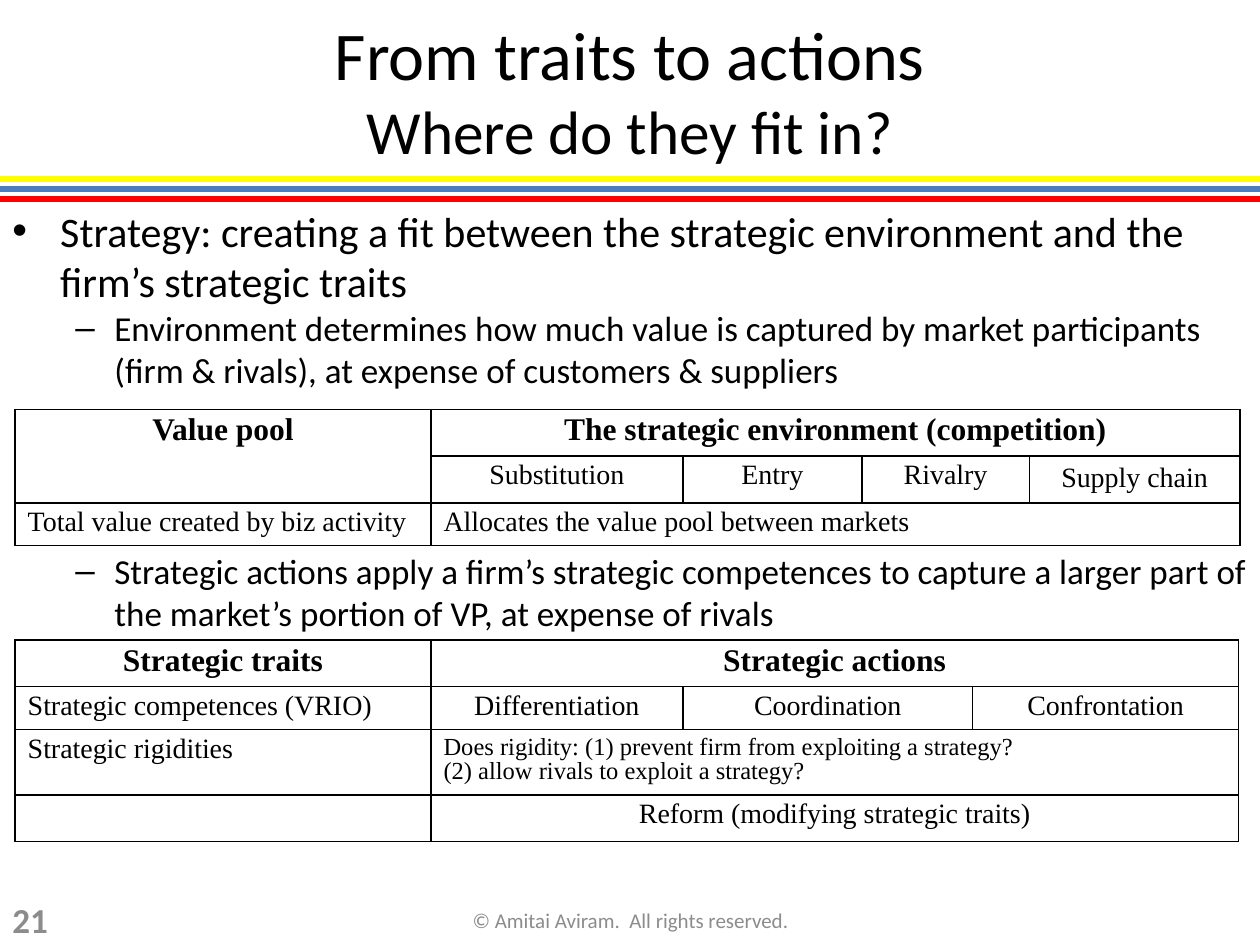
from lxml.etree import SubElement
from pptx import Presentation
from pptx.dml.color import RGBColor as Rgb
from pptx.enum.shapes import MSO_CONNECTOR as Conn
from pptx.enum.text import MSO_ANCHOR as Anchor, PP_ALIGN as Align
from pptx.oxml.ns import qn
from pptx.util import Inches, Pt

INK = {"black": "000000", "gray": "8C8C8C", "yellow": "FFFF00",
       "blue": "4B7EBC", "red": "FF0000"}
SANS, SERIF = "Calibri", "Times New Roman"
MID, LEFT = Align.CENTER, Align.LEFT


def tint(name):
    return Rgb.from_string(INK[name])


def add_run(para, text, size, face=SANS, ink="black", bold=False):
    run = para.add_run()
    run.text = text
    font = run.font
    font.size, font.name, font.bold = Pt(size), face, bold
    font.color.rgb = tint(ink)


def add_box(slide, x, y, w, h, anchor=Anchor.MIDDLE):
    box = slide.shapes.add_textbox(Inches(x), Inches(y), Inches(w), Inches(h))
    frame = box.text_frame
    frame.word_wrap = True
    frame.vertical_anchor = anchor
    return frame


def add_rule(slide, y, ink):
    rule = slide.shapes.add_connector(
        Conn.STRAIGHT, Inches(0), Inches(y), Inches(10), Inches(y))
    rule.line.color.rgb = tint(ink)
    rule.line.width = Pt(3)
    SubElement(rule._element.spPr, qn("a:effectLst"))


def set_bullet(para, mark, left, hang):
    props = para._p.get_or_add_pPr()
    props.set("marL", str(Inches(left)))
    props.set("indent", str(-Inches(hang)))
    SubElement(props, qn("a:buFont"), typeface="Arial")
    SubElement(props, qn("a:buChar"), char=mark)


def add_title(slide):
    para = add_box(slide, 0, 0, 10, 1.42).paragraphs[0]
    para.alignment = MID
    add_run(para, "From traits to actions", 39)
    para.add_line_break()
    add_run(para, "Where do they fit in?", 35)


def add_body(slide):
    frame = add_box(slide, 0, 1.58, 10, 5.67, Anchor.TOP)
    points = [
        (0, 0, "Strategy: creating a fit between the strategic environment "
               "and the firm’s strategic traits"),
        (1, 0, "Environment determines how much value is captured by market "
               "participants (firm & rivals), at expense of customers & "
               "suppliers"),
        (1, 91, "Strategic actions apply a firm’s strategic competences to "
                "capture a larger part of the market’s portion of VP, at "
                "expense of rivals"),
    ]
    looks = [("•", 0.38, 0.38, 24), ("–", 0.81, 0.31, 20)]
    for i, (level, gap, text) in enumerate(points):
        para = frame.add_paragraph() if i else frame.paragraphs[0]
        mark, left, hang, size = looks[level]
        para.level = level
        para.space_before = Pt(gap)
        set_bullet(para, mark, left, hang)
        add_run(para, text, size)


def set_edges(cell):
    props = cell._tc.get_or_add_tcPr()
    for side in ("lnL", "lnR", "lnT", "lnB"):
        edge = SubElement(props, qn("a:" + side), w=str(Pt(1)))
        fill = SubElement(edge, qn("a:solidFill"))
        SubElement(fill, qn("a:srgbClr"), val=INK["black"])
    cell.fill.background()


def fill_cell(cell, text, align, size, bold=False, pitch=0.9):
    para = cell.text_frame.paragraphs[0]
    para.alignment = align
    para.line_spacing = pitch
    for i, line in enumerate(text.split("\n")):
        if i:
            para.add_line_break()
        add_run(para, line, size, SERIF, bold=bold)


def add_grid(slide, y, cols, rows, spans, cells):
    shape = slide.shapes.add_table(
        len(rows), len(cols), Inches(0.12), Inches(y),
        Inches(sum(cols)), Inches(sum(rows)))
    table = shape.table
    table.first_row = table.horz_banding = False
    for col, w in zip(table.columns, cols):
        col.width = Inches(w)
    for row, h in zip(table.rows, rows):
        row.height = Inches(h)
    for cell in table.iter_cells():
        set_edges(cell)
        cell.text_frame.paragraphs[0]._p.get_or_add_endParaRPr().set("sz", "1600")
    for start, end in spans:
        table.cell(*start).merge(table.cell(*end))
    for r, c, *look in cells:
        fill_cell(table.cell(r, c), *look)


def add_pool(slide):
    names = ["Substitution", "Entry", "Rivalry"]
    add_grid(
        slide, 3.25, [3.3, 2, 1.42, 1.33, 1.67], [0.35, 0.35, 0.33],
        [((0, 0), (1, 0)), ((0, 1), (0, 4)), ((2, 1), (2, 4))],
        [(0, 0, "Value pool", MID, 18, True),
         (0, 1, "The strategic environment (competition)", MID, 18, True),
         *[(1, c, name, MID, 16) for c, name in enumerate(names, 1)],
         (1, 4, "Supply chain", MID, 16, False, 1.0),
         (2, 0, "Total value created by biz activity", LEFT, 16),
         (2, 1, "Allocates the value pool between markets", LEFT, 16)])


def add_traits(slide):
    names = ["Differentiation", "Coordination", "Confrontation"]
    add_grid(
        slide, 5.08, [3.3, 2, 2.3, 2.11], [0.37, 0.34, 0.48, 0.35],
        [((r, 1), (r, 3)) for r in (0, 2, 3)],
        [(0, 0, "Strategic traits", MID, 18, True),
         (0, 1, "Strategic actions", MID, 18, True),
         (1, 0, "Strategic competences (VRIO)", LEFT, 16),
         *[(1, c, name, MID, 16) for c, name in enumerate(names, 1)],
         (2, 0, "Strategic rigidities", LEFT, 16),
         (2, 1, "Does rigidity: (1) prevent firm from exploiting a strategy?\n"
                "(2) allow rivals to exploit a strategy?", LEFT, 14),
         (3, 1, "Reform (modifying strategic traits)", MID, 16)])


def add_foot(slide, x, w, text, size, align, bold=False):
    para = add_box(slide, x, 7.1, w, 0.4).paragraphs[0]
    para.alignment = align
    add_run(para, text, size, ink="gray", bold=bold)


def main():
    deck = Presentation()
    deck.slide_width, deck.slide_height = Inches(10), Inches(7.5)
    slide = deck.slides.add_slide(deck.slide_layouts[6])
    for i, ink in enumerate(["yellow", "blue", "red"]):
        add_rule(slide, 1.42 + 0.08 * i, ink)
    add_body(slide)
    add_pool(slide)
    add_traits(slide)
    add_title(slide)
    add_foot(slide, 0, 0.67, "21", 20, Align.JUSTIFY, True)
    add_foot(slide, 3.42, 3.17, "© Amitai Aviram.  All rights reserved.", 12, MID)
    deck.save("out.pptx")


if __name__ == "__main__":
    main()
